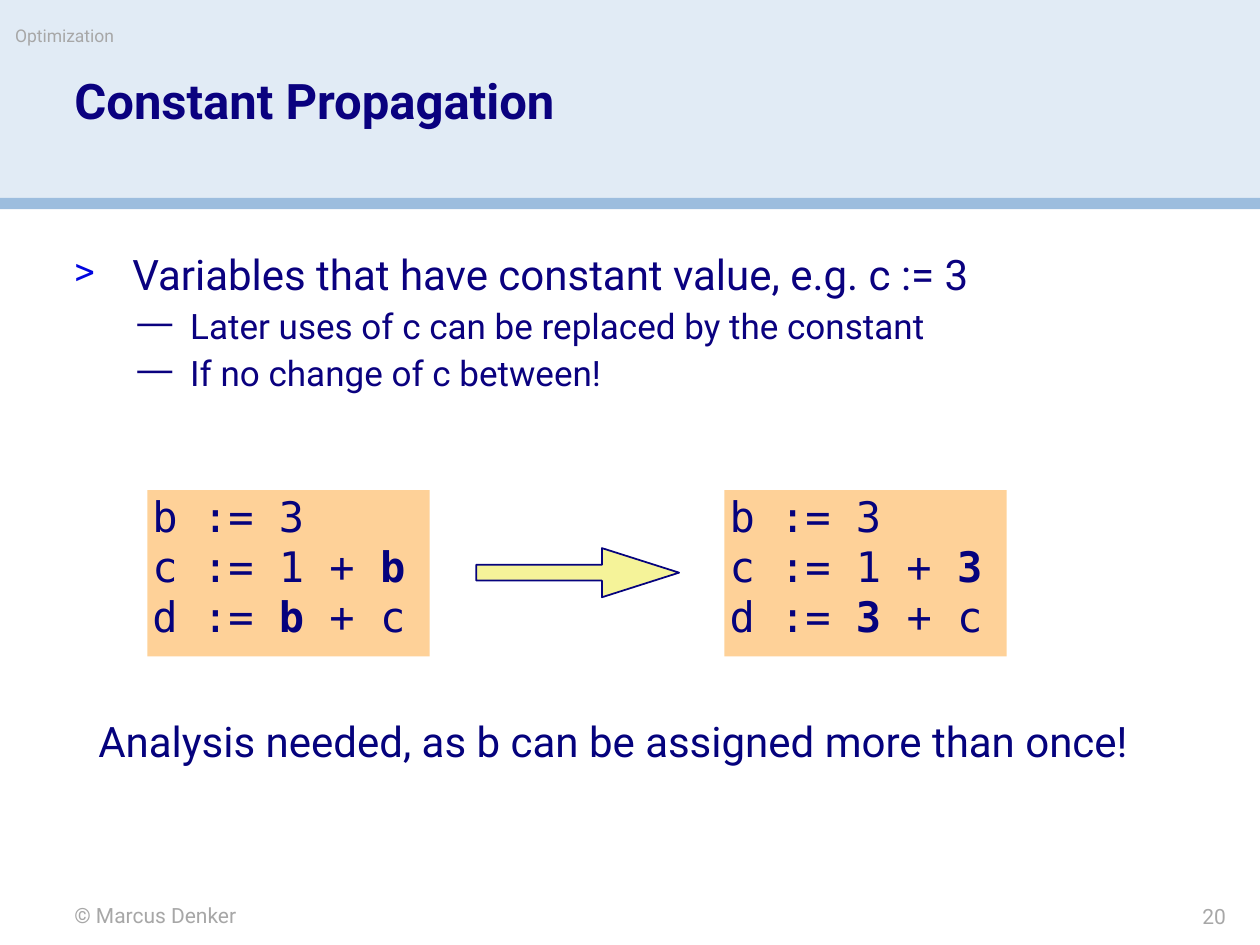
"""Build the slide on constant propagation."""
import dataclasses
import typing

import lxml.etree
import pptx
import pptx.dml.color
import pptx.enum.shapes
import pptx.enum.text
import pptx.oxml.ns
import pptx.util

Inches = pptx.util.Inches
Pt = pptx.util.Pt
Align = pptx.enum.text.PP_ALIGN
Anchor = pptx.enum.text.MSO_ANCHOR
Kind = pptx.enum.shapes.MSO_SHAPE


@dataclasses.dataclass(frozen=True)
class Theme:
    band: str = "E1EBF5"
    rule: str = "9CBDDE"
    grey: str = "A7A7A7"
    head: str = "0A017F"
    ink: str = "05027D"
    mark: str = "0005DF"
    code: str = "FED198"
    arrow: str = "F5F399"
    sans: str = "Roboto"
    mono: str = "DejaVu Sans Mono"
    tiny: int = 10
    small: int = 12
    sub: int = 20
    main: int = 24
    large: int = 28


THEME = Theme()


class Box(typing.NamedTuple):
    left: float
    top: float
    width: float
    height: float


class Style(typing.NamedTuple):
    size: int
    ink: str
    face: str = THEME.sans
    bold: bool = False


class Label(typing.NamedTuple):
    text: str
    box: Box
    style: Style
    align: typing.Any = Align.LEFT
    space: float = 1.0
    inset: float = 0


class Point(typing.NamedTuple):
    text: str
    size: int
    left: float
    hang: float
    sign: str
    tint: str
    scale: int


class Code(typing.NamedTuple):
    left: float
    value: str


def paint(hue: str) -> pptx.dml.color.RGBColor:
    return pptx.dml.color.RGBColor.from_string(hue)


def place(box: Box) -> list:
    return [Inches(side) for side in box]


def add_run(para, text: str, style: Style) -> None:
    run = para.add_run()
    run.text = text
    font = run.font
    font.size, font.name, font.bold = Pt(style.size), style.face, style.bold
    font.color.rgb = paint(style.ink)


def set_frame(frame, inset: float = 0) -> None:
    frame.margin_left = frame.margin_right = Inches(inset)
    frame.margin_top = frame.margin_bottom = 0
    frame.word_wrap = True


def add_form(slide, kind, box: Box, fill: str):
    shape = slide.shapes.add_shape(kind, *place(box))
    shape.shadow.inherit = False
    shape.fill.solid()
    shape.fill.fore_color.rgb = paint(fill)
    shape.line.fill.background()
    return shape


def add_label(slide, label: Label) -> None:
    frame = slide.shapes.add_textbox(*place(label.box)).text_frame
    set_frame(frame, label.inset)
    para = frame.paragraphs[0]
    para.alignment, para.line_spacing = label.align, label.space
    add_run(para, label.text, label.style)


def add_sign(para, point: Point) -> None:
    props = para._p.get_or_add_pPr()
    props.set("marL", str(Inches(point.left)))
    props.set("indent", str(Inches(-point.hang)))
    qn = pptx.oxml.ns.qn
    tint = lxml.etree.SubElement(props, qn("a:buClr"))
    lxml.etree.SubElement(tint, qn("a:srgbClr"), val=point.tint)
    lxml.etree.SubElement(props, qn("a:buSzPct"), val=str(point.scale * 1000))
    lxml.etree.SubElement(props, qn("a:buChar"), char=point.sign)


def add_points(slide, box: Box, points: list[Point]) -> None:
    frame = slide.shapes.add_textbox(*place(box)).text_frame
    set_frame(frame)
    frame.vertical_anchor = Anchor.MIDDLE
    for rank, point in enumerate(points):
        para = frame.add_paragraph() if rank else frame.paragraphs[0]
        para.level = min(rank, 1)
        para.line_spacing = 0.95
        para.space_before = Pt(point.size * 0.2)
        add_sign(para, point)
        add_run(para, point.text, Style(point.size, THEME.head))


def add_code(slide, code: Code) -> None:
    box = Box(code.left, 3.89, 2.24, 1.32)
    frame = add_form(slide, Kind.RECTANGLE, box, THEME.code).text_frame
    set_frame(frame, 0.04)
    frame.vertical_anchor = Anchor.TOP
    plain = Style(THEME.main, THEME.ink, THEME.mono)
    strong = plain._replace(bold=True)
    lines = [
        [("b := 3", plain)],
        [("c := 1 + ", plain), (code.value, strong)],
        [("d := ", plain), (code.value, strong), (" + c", plain)],
    ]
    for rank, line in enumerate(lines):
        para = frame.add_paragraph() if rank else frame.paragraphs[0]
        para.alignment = Align.LEFT
        for text, style in line:
            add_run(para, text, style)


def add_arrow(slide, box: Box) -> None:
    arrow = add_form(slide, Kind.RIGHT_ARROW, box, THEME.arrow)
    arrow.adjustments[0], arrow.adjustments[1] = 0.32, 1.57
    arrow.line.color.rgb = paint(THEME.ink)
    arrow.line.width = Pt(1)


def main() -> None:
    deck = pptx.Presentation()
    deck.slide_width, deck.slide_height = Inches(10), Inches(7.5)
    slide = deck.slides.add_slide(deck.slide_layouts[6])
    add_form(slide, Kind.RECTANGLE, Box(0, 0, 10, 1.58), THEME.band)
    add_form(slide, Kind.RECTANGLE, Box(0, 1.57, 10, 0.09), THEME.rule)
    foot = Style(THEME.small, THEME.grey)
    labels = [
        Label("© Marcus Denker", Box(0.59, 7.16, 4.17, 0.2), foot),
        Label("Optimization", Box(0.12, 0.2, 0.9, 0.17),
              Style(THEME.tiny, THEME.grey)),
        Label("Constant Propagation", Box(0.59, 0.61, 8.83, 0.89),
              Style(THEME.large, THEME.head, bold=True), space=0.9),
        Label("Analysis needed, as b can be assigned more than once!",
              Box(0.74, 5.68, 8.53, 0.51), Style(THEME.main, THEME.ink), inset=0.04),
        Label("20", Box(8.25, 7.17, 1.48, 0.2), foot, Align.RIGHT),
    ]
    for label in labels:
        add_label(slide, label)
    dash = Point("", THEME.sub, 0.92, 0.42, "—", THEME.head, 100)
    add_points(slide, Box(0.59, 1.66, 8.83, 1.81), [
        Point("Variables that have constant value, e.g. c := 3",
              THEME.main, 0.46, 0.46, ">", THEME.mark, 85),
        dash._replace(text="Later uses of c can be replaced by the constant"),
        dash._replace(text="If no change of c between!"),
    ])
    for code in (Code(1.17, "b"), Code(5.75, "3")):
        add_code(slide, code)
    add_arrow(slide, Box(3.78, 4.35, 1.61, 0.39))
    deck.save("out.pptx")


if __name__ == "__main__":
    main()
